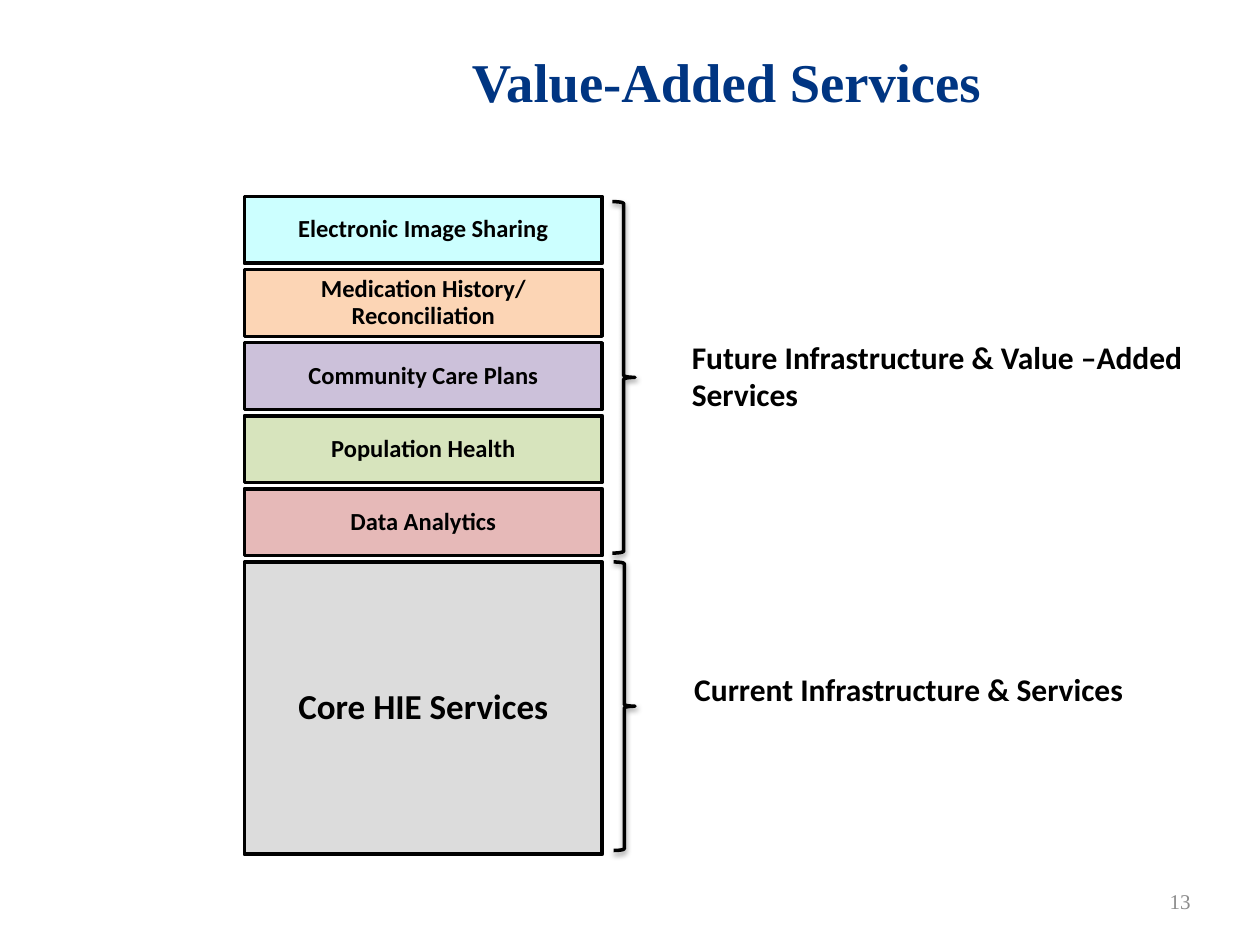
from lxml import etree
from pptx import Presentation
from pptx import util as u
from pptx.dml.color import RGBColor
from pptx.enum import shapes, text
from pptx.oxml import ns

COLORS = {
    "title": "003582", "ink": "000000", "number": "8C8C8C", "core": "DCDCDC",
    "cyan": "CCFFFF", "orange": "FCD5B5", "purple": "CCC1DA",
    "green": "D7E4BD", "red": "E6B9B8",
}
TITLE = "Value-Added Services"
SERVICES = [
    ("Electronic Image Sharing", "cyan"),
    ("Medication History/ Reconciliation", "orange"),
    ("Community Care Plans", "purple"),
    ("Population Health", "green"),
    ("Data Analytics", "red"),
]
CORE = "Core HIE Services"
BRACES = [(4.86, 1.6, 0.18, 2.79), (4.87, 4.46, 0.17, 2.29)]
LABELS = [
    (["Future Infrastructure & Value –Added", "Services"], (5.44, 2.63, 4.12, 0.71)),
    (["Current Infrastructure & Services"], (5.46, 5.27, 4.12, 0.4)),
]
NUMBER = "13"
STACK_LEFT, STACK_TOP, STACK_WIDTH = 1.94, 1.56, 2.84
ROW_HEIGHT, ROW_PITCH, CORE_HEIGHT = 0.53, 0.58, 2.32


def inches(box):
    return [u.Inches(length) for length in box]


def color(name):
    return RGBColor.from_string(COLORS[name])


def write(shape, lines, size=14, font="Calibri", ink="ink", bold=True,
          align=text.PP_ALIGN.LEFT, anchor=text.MSO_ANCHOR.TOP,
          inset=0.05, spacing=None):
    frame = shape.text_frame
    frame.word_wrap = True
    frame.auto_size = text.MSO_AUTO_SIZE.NONE
    frame.vertical_anchor = anchor
    frame.margin_left = frame.margin_right = u.Inches(inset)
    frame.margin_top = frame.margin_bottom = u.Inches(inset)
    frame.text = "\n".join(lines)
    for paragraph in frame.paragraphs:
        paragraph.alignment = align
        paragraph.line_spacing = spacing
        for run in paragraph.runs:
            run.font.name = font
            run.font.size = u.Pt(size)
            run.font.bold = bold
            run.font.color.rgb = color(ink)


def outline(shape):
    shape.shadow.inherit = False
    shape.line.color.rgb = color("ink")
    shape.line.width = u.Pt(2)


def add_block(slide, label, fill, top, height, size, inset):
    shape = slide.shapes.add_shape(
        shapes.MSO_SHAPE.RECTANGLE, *inches((STACK_LEFT, top, STACK_WIDTH, height)))
    outline(shape)
    shape.fill.solid()
    shape.fill.fore_color.rgb = color(fill)
    write(shape, [label], size=size, inset=inset, spacing=0.9,
          align=text.PP_ALIGN.CENTER, anchor=text.MSO_ANCHOR.MIDDLE)


def add_brace(slide, box):
    shape = slide.shapes.add_shape(shapes.MSO_SHAPE.RIGHT_BRACE, *inches(box))
    outline(shape)
    shape.fill.background()
    effects = shape._element.spPr.find(ns.qn("a:effectLst"))
    shadow = etree.SubElement(
        effects, ns.qn("a:outerShdw"), blurRad=str(u.Pt(3)), dist=str(u.Pt(1.6)),
        dir="5400000", rotWithShape="0")
    shade = etree.SubElement(shadow, ns.qn("a:srgbClr"), val=COLORS["ink"])
    etree.SubElement(shade, ns.qn("a:alpha"), val="38000")


def main():
    presentation = Presentation()
    presentation.slide_width, presentation.slide_height = inches((10, 7.5))
    slide = presentation.slides.add_slide(presentation.slide_layouts[5])

    title = slide.shapes.title
    title.left, title.top, title.width, title.height = inches((2.5, 0.2, 6.53, 0.88))
    write(title, [TITLE], size=31.2, font="Times New Roman", ink="title",
          align=text.PP_ALIGN.CENTER, anchor=text.MSO_ANCHOR.MIDDLE)

    for row, (label, fill) in enumerate(SERVICES):
        add_block(slide, label, fill, STACK_TOP + row * ROW_PITCH, ROW_HEIGHT, 14, 0.06)
    core_top = STACK_TOP + len(SERVICES) * ROW_PITCH
    add_block(slide, CORE, "core", core_top, CORE_HEIGHT, 20, 0.08)

    for box in BRACES:
        add_brace(slide, box)
    for lines, box in LABELS:
        write(slide.shapes.add_textbox(*inches(box)), lines, size=18)

    number = slide.shapes.add_textbox(*inches((7.17, 7, 2.33, 0.3)))
    write(number, [NUMBER], size=12, font="Times New Roman", ink="number", bold=False,
          align=text.PP_ALIGN.RIGHT, anchor=text.MSO_ANCHOR.MIDDLE)
    presentation.save("out.pptx")


if __name__ == "__main__":
    main()
